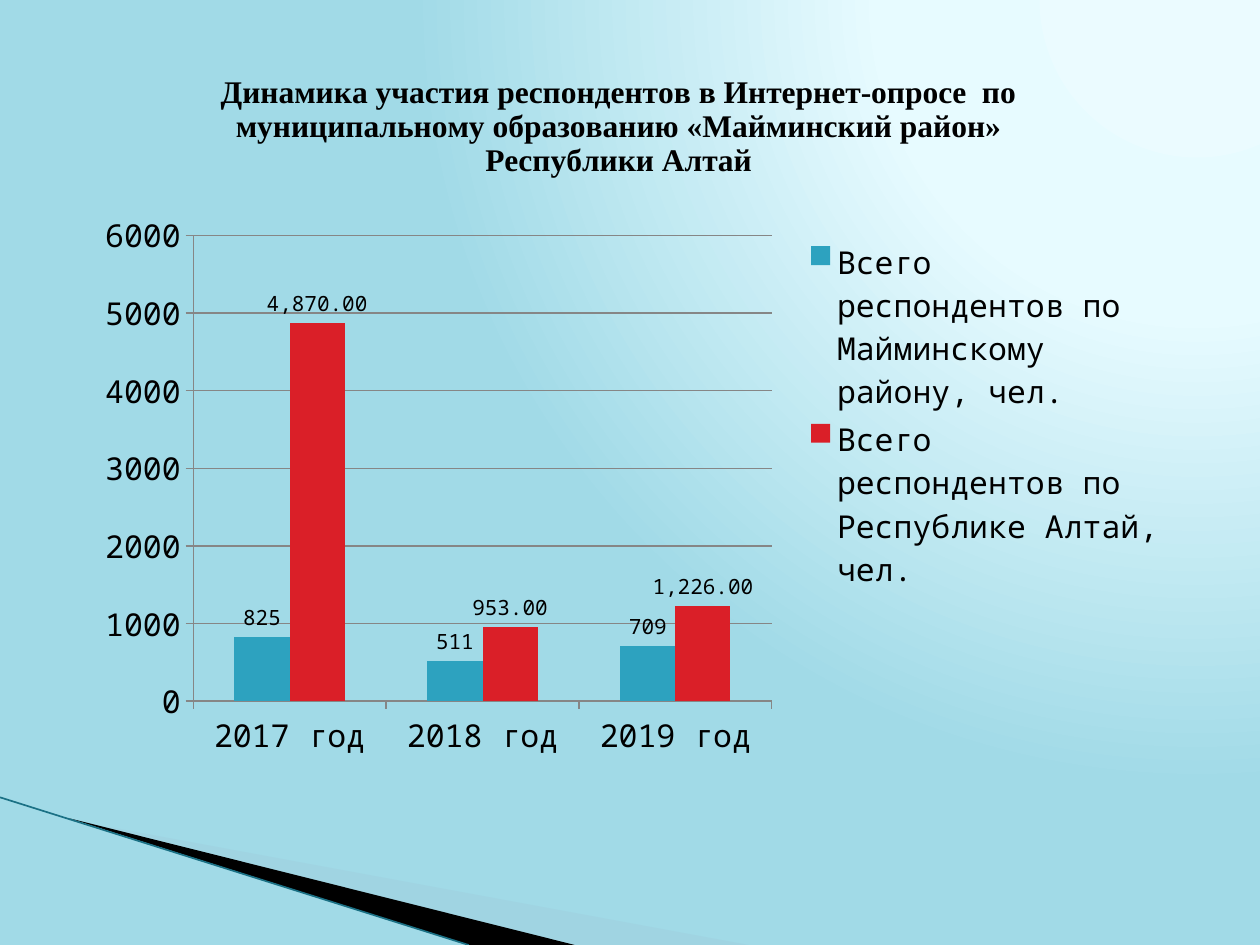
from lxml import etree
from pptx import Presentation
from pptx import util as u
from pptx.chart.data import CategoryChartData
from pptx.dml.color import RGBColor
from pptx.enum import chart as ch, shapes
from pptx.oxml import parse_xml
from pptx.oxml.ns import nsdecls, qn

BLACK = RGBColor(0x00, 0x00, 0x00)
GRAY = RGBColor(0x86, 0x86, 0x86)
TEAL = RGBColor(0x2D, 0xA2, 0xBF)
RED = RGBColor(0xDA, 0x1F, 0x28)
PALE = RGBColor(0xA0, 0xCB, 0xDC)
EDGE = RGBColor(0x1B, 0x71, 0x85)
GLOW = [(0, RGBColor(0xEB, 0xFB, 0xFF)), (40, RGBColor(0xE7, 0xFB, 0xFF)),
        (100, RGBColor(0xA1, 0xDA, 0xE7))]
BODY_FONT, TITLE_FONT = "Noto Sans Mono", "Times New Roman"

TITLE = ("Динамика участия респондентов в Интернет-опросе  по "
         "муниципальному образованию «Майминский район» Республики Алтай")
YEARS = ["2017 год", "2018 год", "2019 год"]
SERIES = [
    ("Всего респондентов по Майминскому району, чел.", [825, 511, 709], TEAL, "General"),
    ("Всего респондентов по Республике Алтай, чел.", [4870, 953, 1226], RED, "#,##0.00"),
]


def paint_background(s):
    """Fill the slide with a circular glow from its upper right."""
    s.background.fill.solid()
    bg = s.element.find(".//" + qn("p:bgPr"))
    stops = "".join(f'<a:gs pos="{pos * 1000}"><a:srgbClr val="{color}"/></a:gs>'
                    for pos, color in GLOW)
    bg.replace(bg[0], parse_xml(
        f'<a:gradFill {nsdecls("a")} rotWithShape="1"><a:gsLst>{stops}</a:gsLst>'
        '<a:path path="circle"><a:fillToRect l="95000" t="-106000" r="5000" b="206000"/>'
        '</a:path></a:gradFill>'))


def set_frame(sp, left, top, width, height):
    """Change the frame of a freeform while its outline stays in place."""
    dx, dy = sp.left - left, sp.top - top
    for pt in sp.element.iter(qn("a:pt")):
        pt.set("x", str(int(pt.get("x")) + dx))
        pt.set("y", str(int(pt.get("y")) + dy))
    outline = sp.element.find(".//" + qn("a:path"))
    outline.set("w", str(width))
    outline.set("h", str(height))
    sp.left, sp.top, sp.width, sp.height = left, top, width, height


def add_wedge(s, box, frame, points, color, alpha=100):
    """Draw a filled outline; frame and points are shares of the box."""
    left, top, width, height = box
    dots = [(int(left + x * width), int(top + y * height)) for x, y in points]
    builder = s.shapes.build_freeform(*dots[0], scale=1.0)
    builder.add_line_segments(dots[1:], close=True)
    sp = builder.convert_to_shape()
    x, y, w, h = frame
    set_frame(sp, int(left + x * width), int(top + y * height),
              int(w * width), int(h * height))
    sp.shadow.inherit = False
    sp.fill.solid()
    sp.fill.fore_color.rgb = color
    sp.line.fill.background()
    if alpha < 100:
        clr = sp.element.spPr.find(".//" + qn("a:srgbClr"))
        etree.SubElement(clr, qn("a:alpha")).set("val", str(alpha * 1000))


def add_corner(s, box):
    """Draw the swept wedges and the edge line at the foot of the box."""
    left, top, width, height = box
    add_wedge(s, box, (0.13, -0.74, 0.69, 1.35),
              [(0.09, 0.15), (0.99, 1), (0.76, 1)], PALE, 40)
    add_wedge(s, box, (-0.01, 0, 0.69, 0.79),
              [(0.09, 0.14), (0.76, 1), (0.62, 1)], BLACK)
    line = s.shapes.add_connector(shapes.MSO_CONNECTOR.STRAIGHT, left, top,
                                  int(left + 0.62 * width), top + height)
    line.line.color.rgb = EDGE
    line.line.width = u.Pt(0.95)
    etree.SubElement(line.element.spPr, qn("a:effectLst"))


def place_part(part, index, **shares):
    """Give a chart part a manual layout in shares of the chart."""
    for old in part.findall(qn("c:layout")):
        part.remove(old)
    modes = "".join(f'<c:{k}Mode val="edge"/>' for k in "xy")
    target = '<c:layoutTarget val="inner"/>' if part.tag == qn("c:plotArea") else ""
    values = "".join(f'<c:{k} val="{v}"/>' for k, v in shares.items())
    part.insert(index, parse_xml(
        f'<c:layout {nsdecls("c")}><c:manualLayout>{target}{modes}{values}'
        '</c:manualLayout></c:layout>'))


def style_font(font, size, name=BODY_FONT, bold=False):
    """Set a black font of the given size and face."""
    font.size, font.name, font.bold = u.Pt(size), name, bold
    font.color.rgb = BLACK


def style_series(series, color, number_format):
    """Colour the columns and label them with their values."""
    series.format.fill.solid()
    series.format.fill.fore_color.rgb = color
    series.invert_if_negative = False
    labels = series.data_labels
    labels.show_value = True
    labels.number_format, labels.number_format_is_linked = number_format, False
    labels.position = ch.XL_LABEL_POSITION.OUTSIDE_END
    style_font(labels.font, 12)


def add_survey_chart(s, box):
    """Add the clustered columns with title and legend in the box."""
    data = CategoryChartData()
    data.categories = YEARS
    for name, values, _, number_format in SERIES:
        data.add_series(name, values, number_format)
    chart = s.shapes.add_chart(ch.XL_CHART_TYPE.COLUMN_CLUSTERED, *box, data).chart
    style_font(chart.font, 18)

    chart.has_title = True
    tf = chart.chart_title.text_frame
    tf.text = TITLE
    style_font(tf.paragraphs[0].runs[0].font, 18, TITLE_FONT, True)
    chart.chart_title.include_in_layout = False

    chart.has_legend = True
    chart.legend.position = ch.XL_LEGEND_POSITION.RIGHT
    chart.legend.include_in_layout = False

    plot = chart.plots[0]
    plot.vary_by_categories = False
    plot.gap_width, plot.overlap = 150, 0
    for series, (_, _, color, number_format) in zip(plot.series, SERIES):
        style_series(series, color, number_format)

    axis = chart.value_axis
    axis.minimum_scale, axis.maximum_scale, axis.major_unit = 0, 6000, 1000
    axis.tick_labels.number_format = "General"
    axis.tick_labels.number_format_is_linked = False
    axis.has_major_gridlines = True
    for part in (axis, chart.category_axis, axis.major_gridlines):
        part.format.line.color.rgb = GRAY
        part.format.line.width = u.Pt(0.75)

    root = chart.element
    place_part(root.find(".//" + qn("c:title")), 1, x=0.12, y=0)
    place_part(root.find(".//" + qn("c:plotArea")), 0, x=0.1, y=0.24, w=0.53, h=0.66)
    place_part(root.find(".//" + qn("c:legend")), 1, x=0.66, y=0.24, w=0.33, h=0.51)


def main():
    """Build and save the survey slide."""
    prs = Presentation()
    prs.slide_width, prs.slide_height = u.Inches(10), u.Inches(7.5)
    w, h = prs.slide_width, prs.slide_height
    s = prs.slides.add_slide(prs.slide_layouts[6])
    paint_background(s)
    corner_top = h * 27 // 32
    add_corner(s, (0, corner_top, int(0.6 * w), h - corner_top))
    add_survey_chart(s, (w // 15, int(0.07 * h), w * 13 // 15, int(0.56 * w)))
    prs.save("out.pptx")


if __name__ == "__main__":
    main()
